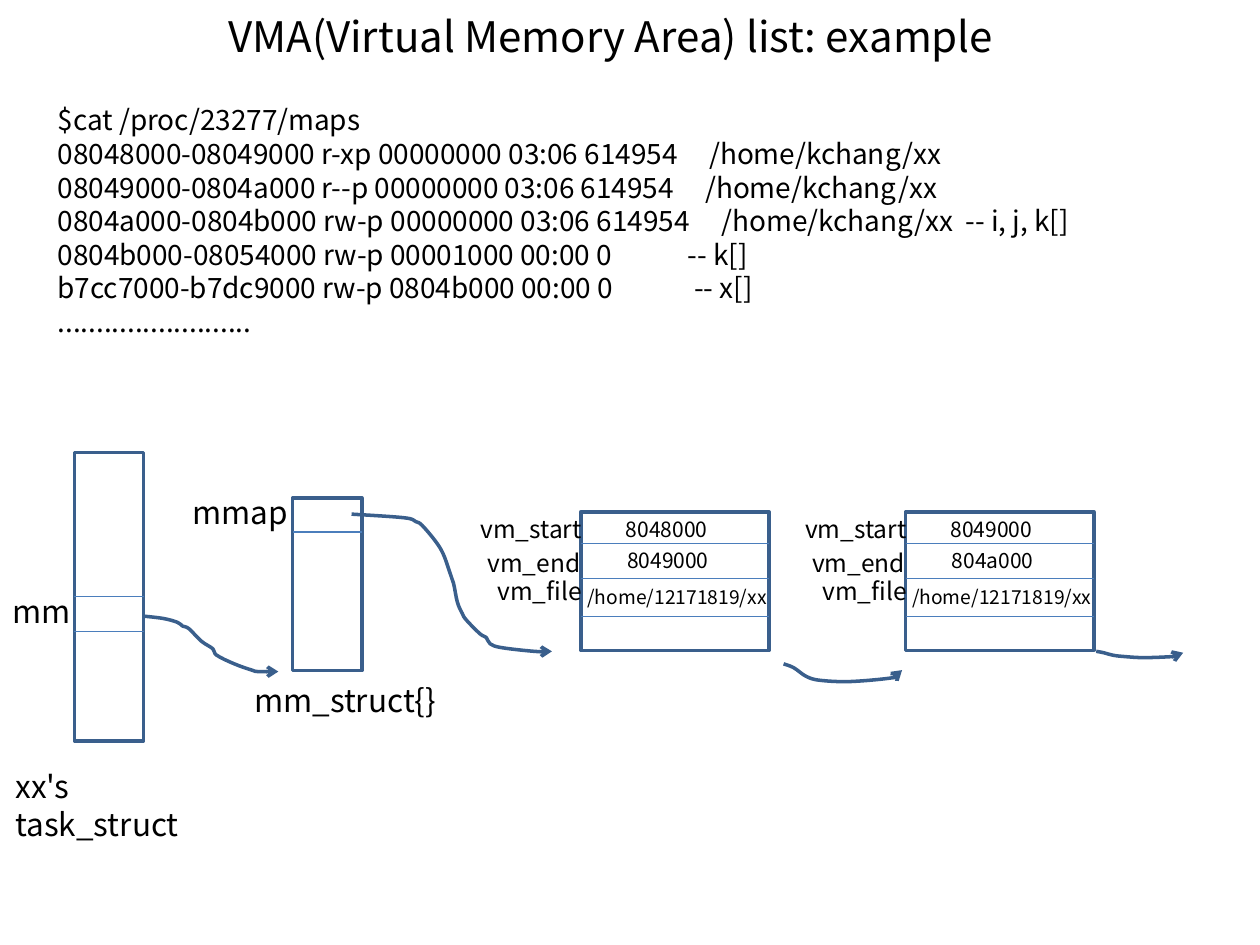
from lxml.etree import SubElement
from pptx import Presentation
from pptx.dml.color import RGBColor
from pptx.enum.shapes import MSO_CONNECTOR, MSO_SHAPE
from pptx.enum.text import MSO_ANCHOR, PP_ALIGN
from pptx.oxml.ns import qn
from pptx.util import Pt


def color(code):
    return RGBColor.from_string(code)


def write(frame, text, size=18, font="Noto Sans CJK KR", ink="000000",
          align=PP_ALIGN.LEFT, anchor=MSO_ANCHOR.TOP, stops=()):
    """Fill a frame, one paragraph a line; stops holds tab stops per line."""
    frame.word_wrap = True
    frame.vertical_anchor = anchor
    for row, line in enumerate(text.split("\n")):
        para = frame.add_paragraph() if row else frame.paragraphs[0]
        para.alignment = align
        run = para.add_run()
        run.text = line
        run.font.size, run.font.name = Pt(size), font
        run.font.color.rgb = color(ink)
        if row < len(stops) and stops[row]:
            tabs = SubElement(para._p.get_or_add_pPr(), qn("a:tabLst"))
            for stop in stops[row]:
                SubElement(tabs, qn("a:tab"), pos=str(Pt(stop)), algn="l")


def bend(shape):
    """Turn the straight parts of a freeform into smooth Bezier curves."""
    marks = list(shape._element.iter(qn("a:pt")))
    spots = [(int(m.get("x")), int(m.get("y"))) for m in marks]
    ends = [spots[0], *spots, spots[-1]]
    for mark, a, b, c, d in zip(marks[1:], ends, ends[1:], ends[2:], ends[3:]):
        part = mark.getparent()
        curve = part.makeelement(qn("a:cubicBezTo"))
        grips = ([q + (r - p) / 6 for p, q, r in zip(a, b, c)],
                 [r - (s - q) / 6 for q, r, s in zip(b, c, d)], c)
        for x, y in grips:
            SubElement(curve, qn("a:pt"), x=str(round(x)), y=str(round(y)))
        part.getparent().replace(part, curve)


class Deck:
    edge, rule = "3A5F8C", "4B7EBC"

    def __init__(self, wide, high):
        self.show = Presentation()
        self.show.slide_width, self.show.slide_height = Pt(wide), Pt(high)
        self.slide = self.show.slides.add_slide(self.show.slide_layouts[6])
        self.shapes = self.slide.shapes

    def label(self, x, y, wide, high, text, **style):
        box = self.shapes.add_textbox(Pt(x), Pt(y), Pt(wide), Pt(high))
        write(box.text_frame, text, **style)

    def trim(self, shape):
        shape.shadow.inherit = False
        shape.fill.background()
        shape.line.color.rgb = color(self.edge)
        shape.line.width = Pt(2)

    def record(self, x, y, wide, high, rows):
        """A box split by thin lines at the heights in rows."""
        self.trim(self.shapes.add_shape(
            MSO_SHAPE.RECTANGLE, Pt(x), Pt(y), Pt(wide), Pt(high)))
        for row in rows:
            line = self.shapes.add_connector(
                MSO_CONNECTOR.STRAIGHT, Pt(x), Pt(row), Pt(x + wide), Pt(row))
            line.line.color.rgb = color(self.rule)
            line.line.width = Pt(0.75)
            SubElement(line._element.spPr, qn("a:effectLst"))

    def arrow(self, *spots):
        first, *rest = [(Pt(x), Pt(y)) for x, y in spots]
        route = self.shapes.build_freeform(*first)
        route.add_line_segments(rest, close=False)
        shape = route.convert_to_shape()
        bend(shape)
        self.trim(shape)
        line = shape._element.spPr.find(qn("a:ln"))
        SubElement(line, qn("a:tailEnd"), type="arrow")

    def area(self, x, start, end):
        """One VMA node with its field names and values."""
        self.record(x, 292.5, 107.6, 79.2, (310.6, 330.5, 352.1))
        for dx, y, name in ((-54.7, 325.4, "vm_file"),
                            (-60.5, 309.6, "vm_end"),
                            (-64.5, 290.2, "vm_start")):
            self.label(x + dx, y, 113, 24.5, name, size=14)
        for dx, y, value, size in ((18.7, 291.6, start, 12),
                                   (19.4, 309.6, end, 12),
                                   (-3.4, 331.2, "/home/12171819/xx", 11)):
            self.label(x + dx, y, 124.5, 21.6, value, size=size)


def main():
    deck = Deck(720, 540)

    # Title and listing
    deck.label(25, 2.2, 648, 36, "VMA(Virtual Memory Area) list: example",
               size=24, align=PP_ALIGN.CENTER, anchor=MSO_ANCHOR.MIDDLE)
    maps = (
        ("$cat /proc/23277/maps", ()),
        ("08048000-08049000 r-xp 00000000 03:06 614954\t/home/kchang/xx", (372.3,)),
        ("08049000-0804a000 r--p 00000000 03:06 614954\t/home/kchang/xx", (370,)),
        ("0804a000-0804b000 rw-p 00000000 03:06 614954\t/home/kchang/xx\t-- i, j, k[]",
         (379.4, 518.8)),
        ("0804b000-08054000 rw-p 00001000 00:00 0\t-- k[]", (360,)),
        ("b7cc7000-b7dc9000 rw-p 0804b000 00:00 0\t-- x[]", (363.8,)),
        (".........................", ()),
    )
    lines, stops = zip(*maps)
    deck.label(25.9, 55.3, 669.6, 145, "\n".join(lines), size=16, stops=stops)

    # Task and memory structs
    deck.record(42.5, 258.5, 39.6, 164.9, (341, 360.7))
    deck.record(167.2, 284.6, 39.6, 98.6, (304,))
    for x, y, wide, name in ((1.7, 434.9, 136.8, "xx's task_struct"),
                             (138.2, 385.4, 136.8, "mm_struct{}"),
                             (0.2, 334.8, 51.1, "mm"),
                             (103, 278.2, 79.2, "mmap")):
        deck.label(x, y, wide, 28.8, name)

    # Area nodes
    nodes = (("8048000", "8049000"), ("8049000", "804a000"))
    for spot, (start, end) in enumerate(nodes):
        deck.area(331.9 + 185.6 * spot, start, end)

    # Pointers
    deck.arrow((82.1, 352.1), (93.6, 353.5), (101.5, 355.7), (104.4, 357.8),
               (108, 359.3), (115.2, 366.5), (121.7, 370.8), (123.8, 374.4),
               (133.9, 379.4), (144, 383), (147.6, 383.8), (159.1, 383.8))
    deck.arrow((200.9, 293.8), (231.1, 295.9), (237.6, 298.1), (241.2, 300.2),
               (249.1, 309.6), (253.4, 316.8), (257, 326.9), (259.2, 333.4),
               (261.4, 344.2), (264.2, 350.6), (266.4, 354.2), (274.3, 362.2),
               (277.9, 364.3), (280.1, 367.9), (286.6, 370.1), (305.3, 372.2),
               (315.4, 372.2))
    deck.arrow((447.8, 379.4), (453.6, 381.6), (460.8, 386.6), (468.7, 388.8),
               (486, 389.5), (509.8, 387.4), (513.4, 385.2), (515.5, 383))
    deck.arrow((626.4, 372.2), (630.7, 373), (635.8, 374.4), (641.5, 375.1),
               (653.8, 375.8), (671.8, 375.1), (673.9, 374.4), (676.1, 373))

    deck.show.save("out.pptx")


if __name__ == "__main__":
    main()
